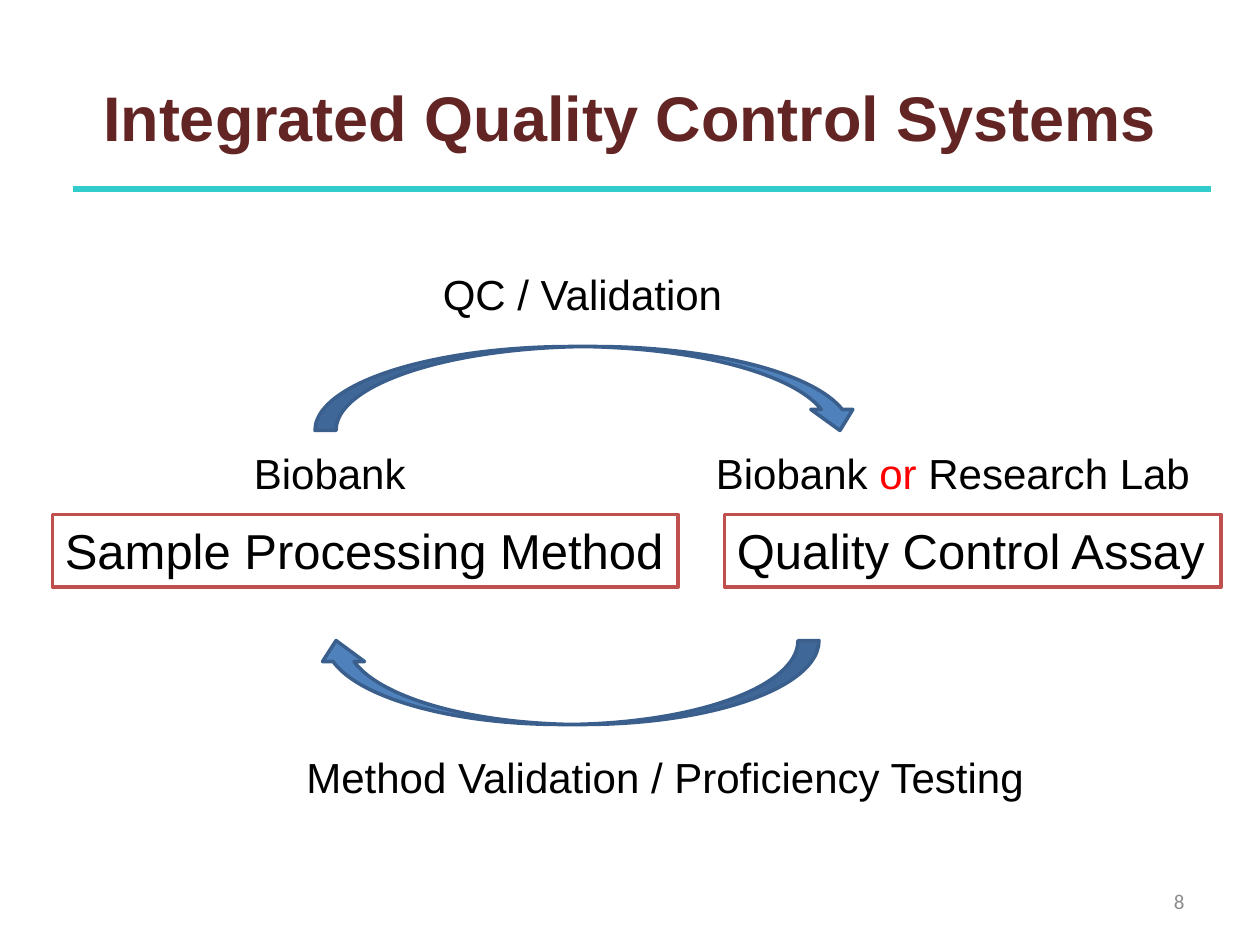
import pptx
import pptx.dml.color
import pptx.enum.shapes
import pptx.enum.text
import pptx.oxml
import pptx.oxml.ns
import pptx.util

RGBColor = pptx.dml.color.RGBColor
MSO_SHAPE = pptx.enum.shapes.MSO_SHAPE
PP_ALIGN = pptx.enum.text.PP_ALIGN
MSO_ANCHOR = pptx.enum.text.MSO_ANCHOR
Pt = pptx.util.Pt

WHITE = RGBColor(0xFF, 0xFF, 0xFF)
BLACK = RGBColor(0x00, 0x00, 0x00)
RED = RGBColor(0xFF, 0x00, 0x00)
MAROON = RGBColor(0x63, 0x25, 0x23)
TEAL = RGBColor(0x33, 0xCC, 0xCC)
GRAY = RGBColor(0x8C, 0x8C, 0x8C)
BRICK = RGBColor(0xC0, 0x50, 0x4D)
BLUE = RGBColor(0x4F, 0x81, 0xBD)
NAVY = RGBColor(0x3A, 0x5F, 0x8C)


def px(n):
    """Turn px, 120 to the inch, into EMU."""
    return pptx.util.Emu(n * 7620)


def write(sp, runs, size, color=BLACK, font="Arial", bold=False,
          align=PP_ALIGN.LEFT, anchor=MSO_ANCHOR.TOP, wrap=False):
    """Fill a shape with one paragraph of (text, color) runs."""
    tf = sp.text_frame
    tf.word_wrap = wrap
    tf.vertical_anchor = anchor
    if not wrap:
        tf.auto_size = pptx.enum.text.MSO_AUTO_SIZE.SHAPE_TO_FIT_TEXT
    p = tf.paragraphs[0]
    p.alignment = align
    p.font.size = Pt(size)
    p.font.name = font
    p.font.bold = bold
    p.font.color.rgb = color
    for text, run_color in runs:
        r = p.add_run()
        r.text = text
        if run_color != color:
            r.font.color.rgb = run_color


def add_text(s, box, runs, size, **style):
    """Add a text box."""
    sp = s.shapes.add_textbox(*map(px, box))
    write(sp, runs, size, **style)


def add_shape(s, kind, box, fill, line):
    """Add a flat preset shape with a 2 pt outline."""
    sp = s.shapes.add_shape(kind, *map(px, box))
    sp.shadow.inherit = False
    sp.fill.solid()
    sp.fill.fore_color.rgb = fill
    sp.line.color.rgb = line
    sp.line.width = Pt(2)
    return sp


def add_header(s, x, y, w, h):
    """Add the title and the rule beneath it."""
    add_text(s, (x, y, w, h), [("Integrated Quality Control Systems", MAROON)], 36,
             color=MAROON, bold=True, align=PP_ALIGN.CENTER,
             anchor=MSO_ANCHOR.MIDDLE, wrap=True)
    rule_y = px(y + h - 6)
    rule = s.shapes.add_connector(pptx.enum.shapes.MSO_CONNECTOR.STRAIGHT,
                                  px(x + 10), rule_y, px(x + w + 13), rule_y)
    rule.line.color.rgb = TEAL
    rule.line.width = Pt(4)
    pptx.oxml.ns.qn("a:effectLst")
    rule.element.spPr.append(pptx.oxml.parse_xml(
        '<a:effectLst xmlns:a="http://schemas.openxmlformats.org/drawingml/2006/main"/>'))


def add_cycle(s, x, y):
    """Add the two boxed methods, the arrows between them and their labels."""
    for dx, w, text in ((0, 596, "Sample Processing Method"),
                        (640, 473, "Quality Control Assay")):
        sp = add_shape(s, MSO_SHAPE.RECTANGLE, (x + dx, y + 240, w, 69), WHITE, BRICK)
        write(sp, [(text, BLACK)], 28)
    for dy, w, rotation in ((80, 520, 0), (360, 480, 180)):
        sp = add_shape(s, MSO_SHAPE.CURVED_DOWN_ARROW, (x + 250, y + dy, w, 80), BLUE, NAVY)
        sp.rotation = rotation
    for dx, dy, w, runs in (
            (180, 170, 170, [("Biobank", BLACK)]),
            (620, 170, 480, [("Biobank ", BLACK), ("or ", RED), ("Research Lab", BLACK)]),
            (360, 0, 293, [("QC / Validation", BLACK)]),
            (230, 460, 715, [("Method Validation / Proficiency Testing", BLACK)])):
        add_text(s, (x + dx, y + dy, w, 60), runs, 24)


def add_footer(s, x, y, w, h):
    """Add the slide number."""
    add_text(s, (x, y, w, h), [("8", GRAY)], 12, color=GRAY, font="Calibri",
             align=PP_ALIGN.RIGHT, anchor=MSO_ANCHOR.MIDDLE, wrap=True)


def main():
    """Build the slide and save it."""
    prs = pptx.Presentation()
    prs.slide_width, prs.slide_height = px(1200), px(900)
    s = prs.slides.add_slide(prs.slide_layouts[6])
    add_header(s, 60, 36, 1080, 150)
    add_cycle(s, 50, 250)
    add_footer(s, 860, 834, 280, 48)
    prs.save("out.pptx")


if __name__ == "__main__":
    main()
